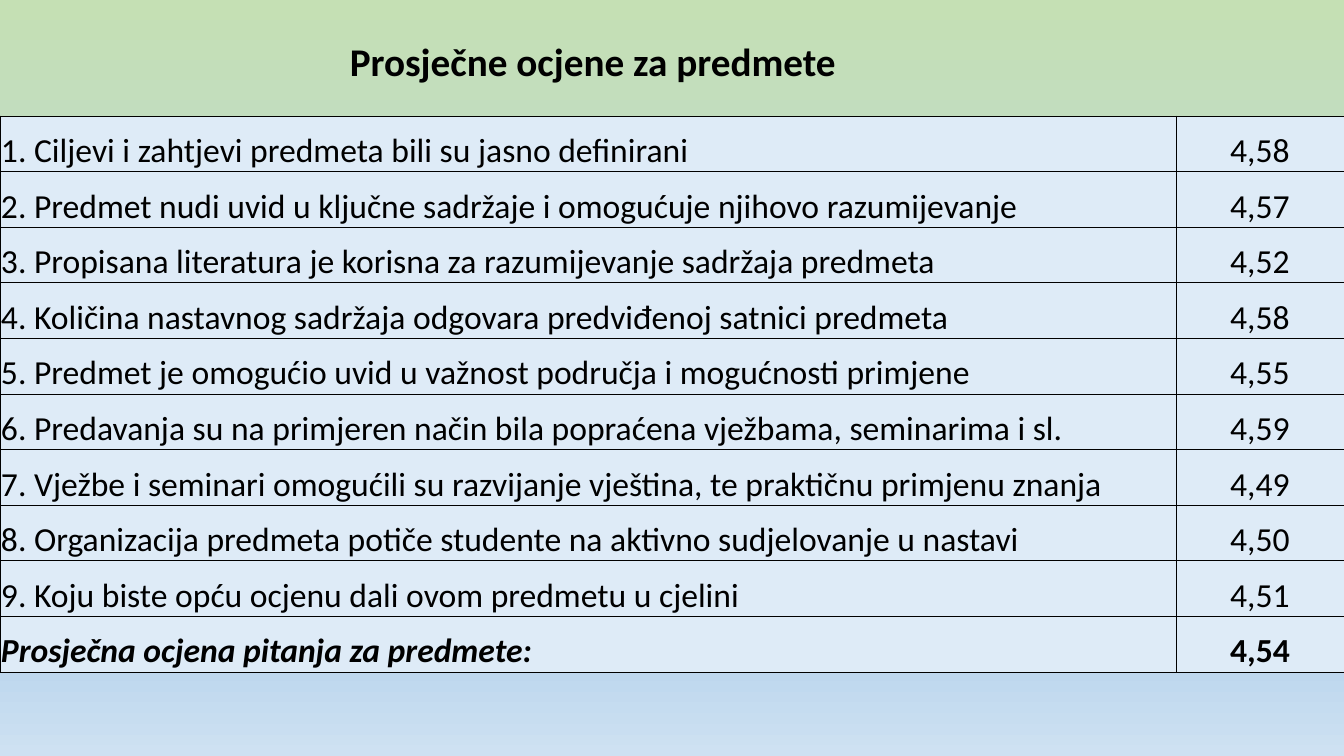
from copy import deepcopy

from lxml import etree
from pptx import Presentation
from pptx.dml.color import RGBColor
from pptx.enum.text import MSO_ANCHOR, MSO_AUTO_SIZE, PP_ALIGN
from pptx.oxml.ns import qn
from pptx.util import Pt

# Content
TITLE = "Prosječne ocjene za predmete"
RATINGS = [
    ("1. Ciljevi i zahtjevi predmeta bili su jasno definirani", "4,58"),
    ("2. Predmet nudi uvid u ključne sadržaje i omogućuje njihovo razumijevanje", "4,57"),
    ("3. Propisana literatura je korisna za razumijevanje sadržaja predmeta", "4,52"),
    ("4. Količina nastavnog sadržaja odgovara predviđenoj satnici predmeta", "4,58"),
    ("5. Predmet je omogućio uvid u važnost područja i mogućnosti primjene", "4,55"),
    ("6. Predavanja su na primjeren način bila popraćena vježbama, seminarima i sl.", "4,59"),
    ("7. Vježbe i seminari omogućili su razvijanje vještina, te praktičnu primjenu znanja", "4,49"),
    ("8. Organizacija predmeta potiče studente na aktivno sudjelovanje u nastavi", "4,50"),
    ("9. Koju biste opću ocjenu dali ovom predmetu u cjelini", "4,51"),
    ("Prosječna ocjena pitanja za predmete:", "4,54"),
]

# Format
BLACK = RGBColor(0x00, 0x00, 0x00)
CELL_BLUE = RGBColor(0xDE, 0xEB, 0xF7)
GREEN = RGBColor(0xC5, 0xE0, 0xB4)
SKY = RGBColor(0xB5, 0xD2, 0xEC)
PALE_SKY = RGBColor(0xCE, 0xE1, 0xF2)
BACKGROUND = [(0, GREEN), (0.74, SKY), (0.83, SKY), (1, PALE_SKY)]
TITLE_FONT = {"name": "Calibri", "size": Pt(28), "bold": True}
CELL_FONT = {"name": "Calibri", "size": Pt(24), "bold": False, "italic": False}
BORDER_WIDTH = Pt(0.5)
BOTTOM, LEFT, CENTER = MSO_ANCHOR.BOTTOM, PP_ALIGN.LEFT, PP_ALIGN.CENTER
FIT_SHAPE = MSO_AUTO_SIZE.SHAPE_TO_FIT_TEXT

# Layout in px
SLIDE_W, SLIDE_H = 1344, 756
TITLE_BOX = (340, 32, 511, 57)
TABLE_TOP, TABLE_H = 116, 556
COLUMNS = [(1176, LEFT), (168, CENTER)]


def px(n):
    return round(n * 914400 / 100.8)


def write(p, text, font):
    r = p.add_run()
    r.text = text
    for key, value in font.items():
        setattr(r.font, key, value)
    r.font.color.rgb = BLACK


def add_borders(cell):
    tcPr = cell._tc.get_or_add_tcPr()
    for i, side in enumerate(("a:lnL", "a:lnR", "a:lnT", "a:lnB")):
        ln = etree.Element(qn(side), w=str(BORDER_WIDTH))
        fill = etree.SubElement(ln, qn("a:solidFill"))
        etree.SubElement(fill, qn("a:srgbClr"), val=str(BLACK))
        tcPr.insert(i, ln)


prs = Presentation()
prs.slide_width, prs.slide_height = px(SLIDE_W), px(SLIDE_H)
s = prs.slides.add_slide(prs.slide_layouts[6])

# Background gradient, top to bottom
fill = s.background.fill
fill.gradient()
fill.gradient_angle = 270
stops = s._element.find(".//" + qn("a:gsLst"))
while len(stops) < len(BACKGROUND):
    stops.append(deepcopy(stops[0]))
for stop, (position, color) in zip(fill.gradient_stops, BACKGROUND):
    stop.position = position
    stop.color.rgb = color

# Ratings table
table = s.shapes.add_table(len(RATINGS), len(COLUMNS), 0, px(TABLE_TOP),
                           px(SLIDE_W), px(TABLE_H)).table
table.first_row = table.horz_banding = False
for column, (width, _) in zip(table.columns, COLUMNS):
    column.width = px(width)
for i, rating in enumerate(RATINGS):
    total = i == len(RATINGS) - 1
    table.rows[i].height = px(TABLE_H / len(RATINGS))
    for j, text in enumerate(rating):
        cell = table.cell(i, j)
        cell.margin_left = cell.margin_right = cell.margin_top = px(1)
        cell.margin_bottom = 0
        cell.vertical_anchor = BOTTOM
        cell.fill.solid()
        cell.fill.fore_color.rgb = CELL_BLUE
        add_borders(cell)
        p = cell.text_frame.paragraphs[0]
        p.alignment = COLUMNS[j][1]
        write(p, text, {**CELL_FONT, "bold": total, "italic": total and j == 0})

# Title
tf = s.shapes.add_textbox(*map(px, TITLE_BOX)).text_frame
tf.word_wrap = False
tf.auto_size = FIT_SHAPE
write(tf.paragraphs[0], TITLE, TITLE_FONT)

prs.save("out.pptx")
